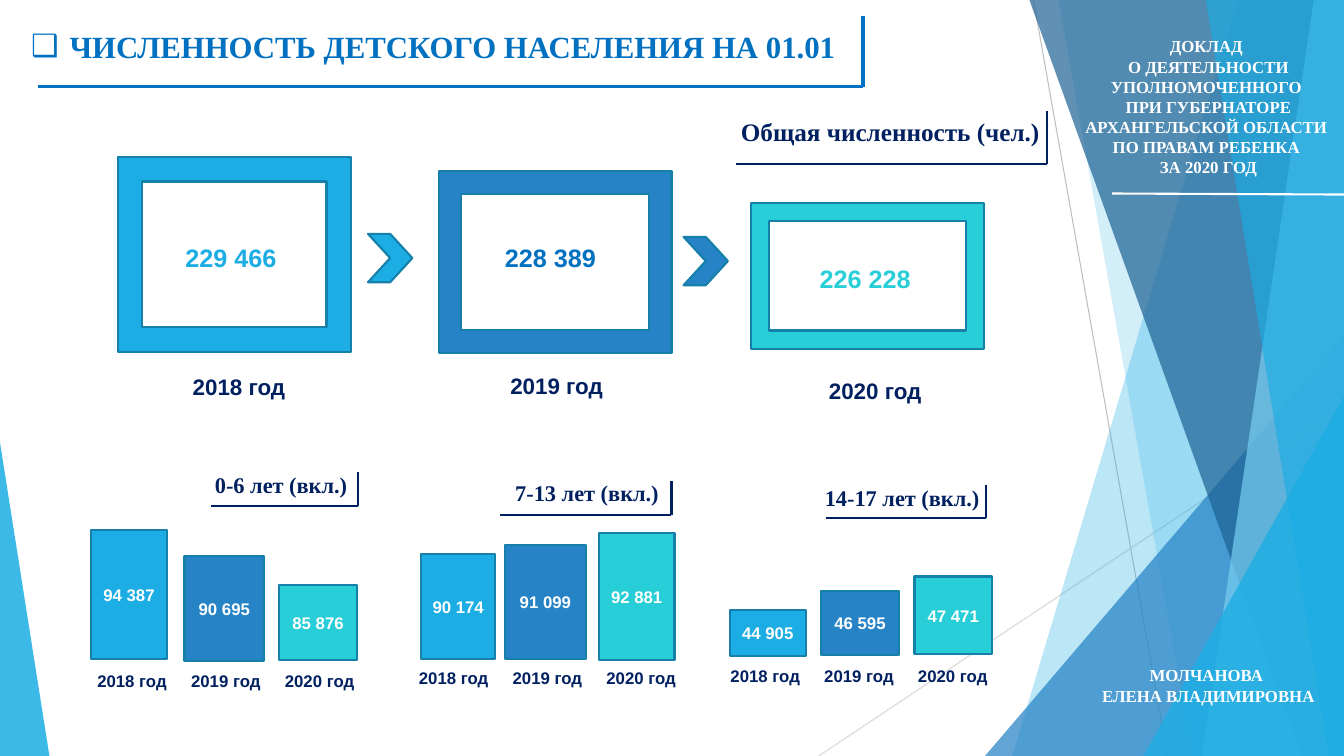
from lxml.etree import SubElement
from pptx import Presentation
from pptx.dml.color import RGBColor
from pptx.enum.shapes import MSO_CONNECTOR, MSO_SHAPE
from pptx.enum.text import MSO_ANCHOR, MSO_AUTO_SIZE, PP_ALIGN
from pptx.oxml.ns import qn
from pptx.util import Inches, Pt

WIDTH, HEIGHT = 13.33, 7.5
SERIF, SANS = "Times New Roman", "Arial"

WHITE = RGBColor(0xFF, 0xFF, 0xFF)
NAVY = RGBColor(0x00, 0x20, 0x60)
BLUE = RGBColor(0x00, 0x70, 0xC0)
SKY = RGBColor(0x1C, 0xAD, 0xE4)
MID_BLUE = RGBColor(0x26, 0x83, 0xC6)
TURQUOISE = RGBColor(0x27, 0xCE, 0xD7)
DEEP = RGBColor(0x1D, 0x62, 0x94)
PALE = RGBColor(0x77, 0xCE, 0xEF)
EDGE = RGBColor(0x15, 0x80, 0xA9)
GREY = RGBColor(0xBF, 0xBF, 0xBF)
LIGHT_GREY = RGBColor(0xD9, 0xD9, 0xD9)

# Content
TITLE = "ЧИСЛЕННОСТЬ ДЕТСКОГО НАСЕЛЕНИЯ НА 01.01"
REPORT = ["ДОКЛАД ", "О ДЕЯТЕЛЬНОСТИ УПОЛНОМОЧЕННОГО ",
          "ПРИ ГУБЕРНАТОРЕ АРХАНГЕЛЬСКОЙ ОБЛАСТИ ",
          "ПО ПРАВАМ РЕБЕНКА ", "ЗА 2020 ГОД"]
AUTHOR = ["МОЛЧАНОВА ", "ЕЛЕНА ВЛАДИМИРОВНА"]
YEARS = ["2018 год", "2019 год", "2020 год"]
YEAR_COLOURS = [SKY, MID_BLUE, TURQUOISE]

# Totals: value, its colour, frame box, value centre and top, year centre and top
TOTALS = [
    ("229 466", SKY, (1.17, 1.56, 2.31, 1.93), (2.29, 2.35), (2.37, 3.65)),
    ("228 389", BLUE, (4.35, 1.7, 2.31, 1.8), (5.46, 2.35), (5.52, 3.64)),
    ("226 228", TURQUOISE, (7.45, 2.01, 2.31, 1.45), (8.58, 2.56), (8.68, 3.69)),
]
CHEVRONS = [(3.65, 2.32), (6.78, 2.35)]

# Headings: text, size, box, then bracket left, right, top, bottom
HEADINGS = [
    ("Общая численность (чел.)", 18, (7.23, 1.1, 3.2, 0.4), (7.3, 10.38, 1.1, 1.63)),
    ("0-6 лет (вкл.) ", 16, (2.02, 4.62, 1.59, 0.37), (2.09, 3.55, 4.68, 5.02)),
    ("7-13 лет (вкл.) ", 16, (5, 4.7, 1.7, 0.37), (4.96, 6.66, 4.77, 5.11)),
    ("14-17 лет (вкл.) ", 16, (8.07, 4.75, 1.81, 0.37), (8.19, 9.78, 4.81, 5.14)),
]

# Age groups: first year centre, year top, bars (value, box)
YEAR_STEP = 0.93
AGE_GROUPS = [
    (1.31, 6.6, [("94 387", (0.9, 5.26, 0.76, 1.28)),
                 ("90 695", (1.83, 5.52, 0.79, 1.04)),
                 ("85 876", (2.77, 5.8, 0.77, 0.75))]),
    (4.5, 6.57, [("90 174", (4.18, 5.5, 0.73, 1.04)),
                 ("91 099", (5.01, 5.41, 0.8, 1.13)),
                 ("92 881", (5.94, 5.29, 0.75, 1.26))]),
    (7.59, 6.56, [("44 905", (7.24, 6.05, 0.75, 0.46)),
                  ("46 595", (8.14, 5.86, 0.78, 0.64)),
                  ("47 471", (9.07, 5.72, 0.77, 0.77))]),
]

# Backdrop: bands between a slanted edge (top x, bottom x) and the right side,
# and triangles (box, apex share); each with colour and opacity in percent
BANDS_BACK = [(12.28, 10.04, SKY, 30), (10.5, 11.83, SKY, 20)]
BANDS_FRONT = [(10.21, 12.91, DEEP, 70), (13.03, 11.92, PALE, 70), (11.96, 13.18, SKY, 65)]
TRIANGLE_BACK = ((9.77, 3.33, 3.56, 4.17), 1, MID_BLUE, 72)
TRIANGLES_FRONT = [((11.34, 3.93, 1.99, 3.57), 1, SKY, 80),
                   ((0, 4.39, 0.49, 3.11), 0, SKY, 85)]

deck = Presentation()
deck.slide_width, deck.slide_height = Inches(WIDTH), Inches(HEIGHT)
page = deck.slides.add_slide(deck.slide_layouts[5])


def inches(box):
    return [Inches(length) for length in box]


def add_line(start, end, colour, width):
    line = page.shapes.add_connector(MSO_CONNECTOR.STRAIGHT, *inches(start + end))
    line.line.color.rgb, line.line.width = colour, Pt(width)
    SubElement(line._element.spPr, qn("a:effectLst"))


def add_bracket(left, right, top, bottom, colour, width):
    add_line((left, bottom), (right, bottom), colour, width)
    add_line((right, top), (right, bottom), colour, width)


def write(para, lines, size, font, colour):
    for number, text in enumerate(lines):
        if number:
            para.add_line_break()
        span = para.add_run()
        span.text = text
        span.font.name, span.font.size = font, Pt(size)
        span.font.bold, span.font.color.rgb = True, colour


def add_text(box, lines, size, font, colour, wrap=True):
    frame = page.shapes.add_textbox(*inches(box)).text_frame
    frame.word_wrap = wrap
    para = frame.paragraphs[0]
    para.alignment = PP_ALIGN.CENTER
    write(para, lines, size, font, colour)


def add_label(centre, top, text, size, colour):
    width = 1.3
    add_text((centre - width / 2, top, width, size / 45), [text], size, SANS, colour)


def add_solid(kind, box, colour):
    shape = page.shapes.add_shape(kind, *inches(box))
    shape.shadow.inherit = False
    shape.fill.solid()
    shape.fill.fore_color.rgb = colour
    shape.line.color.rgb, shape.line.width = EDGE, Pt(1.5)
    return shape


def make_glass(shape, colour, opacity):
    shape.shadow.inherit = False
    shape.fill.solid()
    shape.fill.fore_color.rgb = colour
    shape.line.fill.background()
    tint = shape._element.spPr.find(".//" + qn("a:srgbClr"))
    SubElement(tint, qn("a:alpha"), val=str(opacity * 1000))


def add_band(top_x, bottom_x, colour, opacity):
    corners = [(top_x, 0), (WIDTH, 0), (WIDTH, HEIGHT), (bottom_x, HEIGHT)]
    points = [(x * 100, y * 100) for x, y in corners]
    outline = page.shapes.build_freeform(*points[0], scale=Inches(0.01))
    outline.add_line_segments(points[1:], close=True)
    make_glass(outline.convert_to_shape(), colour, opacity)


def add_triangle(box, apex, colour, opacity):
    shape = page.shapes.add_shape(MSO_SHAPE.ISOSCELES_TRIANGLE, *inches(box))
    shape.adjustments[0] = apex
    make_glass(shape, colour, opacity)


# Backdrop
add_line((10.25, 0), (11.58, HEIGHT), GREY, 0.75)
add_line((WIDTH, 4.03), (8.12, HEIGHT), LIGHT_GREY, 0.75)
for band in BANDS_BACK:
    add_band(*band)
add_triangle(*TRIANGLE_BACK)
for band in BANDS_FRONT:
    add_band(*band)
for triangle in TRIANGLES_FRONT:
    add_triangle(*triangle)

# Side texts
add_text((10.64, 0.31, 2.69, 1.51), REPORT, 12, SERIF, WHITE)
add_line((11.03, 1.92), (WIDTH, 1.93), WHITE, 1.5)
add_text((10.64, 6.55, 2.69, 0.5), AUTHOR, 12, SERIF, WHITE)

# Title with its square bullet
title = page.shapes.title
title.left, title.top, title.width, title.height = inches((0.21, 0.04, 9.42, 0.66))
title.text_frame.auto_size = MSO_AUTO_SIZE.NONE
title.text_frame.vertical_anchor = MSO_ANCHOR.TOP
title_para = title.text_frame.paragraphs[0]
title_para.alignment, title_para.line_spacing = PP_ALIGN.LEFT, 1.5
write(title_para, [TITLE], 22, SERIF, BLUE)
settings = title_para._p.get_or_add_pPr()
settings.set("marL", str(Inches(0.38)))
settings.set("indent", str(-Inches(0.38)))
SubElement(settings, qn("a:buFont"), typeface=SANS)
SubElement(settings, qn("a:buChar"), char="❑")
add_bracket(0.38, 8.56, 0.16, 0.86, BLUE, 2.25)

# Headings with brackets
for text, size, box, bracket in HEADINGS:
    add_text(box, [text], size, SERIF, NAVY, wrap=False)
    add_bracket(*bracket, NAVY, 1.5)

# Totals by year
for year, fill, (value, colour, box, value_at, year_at) in zip(YEARS, YEAR_COLOURS, TOTALS):
    add_solid(MSO_SHAPE.FRAME, box, fill)
    add_label(*value_at, value, 18, colour)
    add_label(*year_at, year, 16, NAVY)
for corner, fill in zip(CHEVRONS, YEAR_COLOURS):
    add_solid(MSO_SHAPE.CHEVRON, corner + (0.44, 0.48), fill)

# Bars by age group
for first_centre, year_top, bars in AGE_GROUPS:
    for column, (value, box) in enumerate(bars):
        bar = add_solid(MSO_SHAPE.RECTANGLE, box, YEAR_COLOURS[column])
        frame = bar.text_frame
        frame.margin_left = frame.margin_right = 0
        frame.vertical_anchor = MSO_ANCHOR.MIDDLE
        frame.paragraphs[0].alignment = PP_ALIGN.CENTER
        write(frame.paragraphs[0], [value], 12, SANS, WHITE)
        add_label(first_centre + column * YEAR_STEP, year_top, YEARS[column], 12, NAVY)

deck.save("out.pptx")
